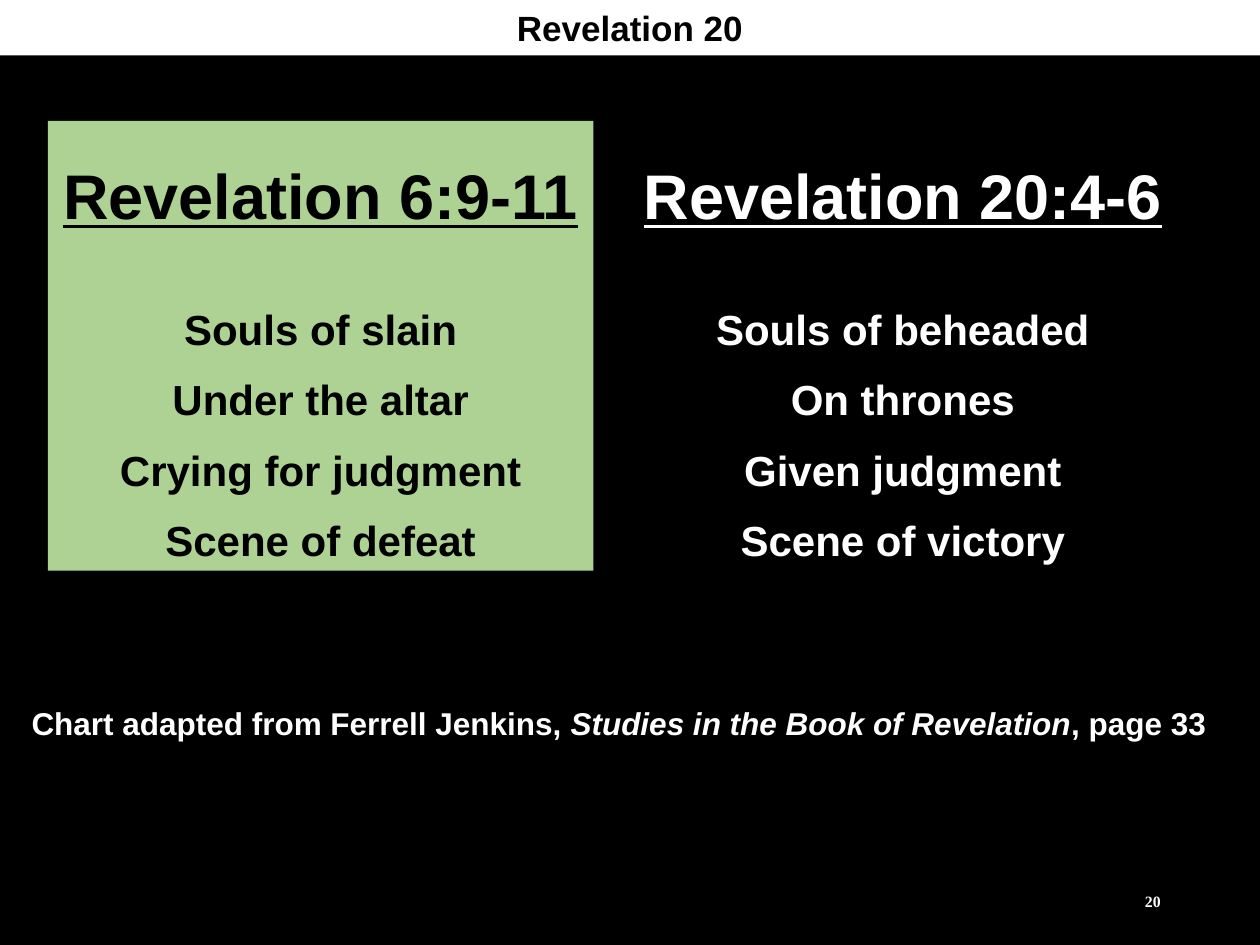
from pptx import Presentation
from pptx.dml.color import RGBColor
from pptx.enum import shapes, text
from pptx.util import Inches, Pt

COLORS = {"black": "000000", "white": "FFFFFF", "green": "AED194"}
ALIGN = text.PP_ALIGN
ANCHOR = text.MSO_ANCHOR
PANELS = [
    (0.38, 4.33, "green", "black", "Revelation 6:9-11",
     ["Souls of slain", "Under the altar", "Crying for judgment", "Scene of defeat"]),
    (4.99, 4.35, "black", "white", "Revelation 20:4-6",
     ["Souls of beheaded", "On thrones", "Given judgment", "Scene of victory"]),
]


def color(name):
    return RGBColor.from_string(COLORS[name])


def add_rect(slide, box, fill):
    rect = slide.shapes.add_shape(shapes.MSO_SHAPE.RECTANGLE, *map(Inches, box))
    rect.shadow.inherit = False
    rect.fill.solid()
    rect.fill.fore_color.rgb = color(fill)
    rect.line.fill.background()
    return rect.text_frame


def add_box(slide, box, anchor):
    frame = slide.shapes.add_textbox(*map(Inches, box)).text_frame
    frame.word_wrap = True
    frame.vertical_anchor = anchor
    return frame


def style(para, size, ink, align=ALIGN.CENTER, face="Arial"):
    para.alignment = align
    font = para.font
    font.name, font.size, font.bold = face, Pt(size), True
    font.color.rgb = color(ink)


def add_panel(slide, left, width, fill, ink, title, lines):
    frame = add_rect(slide, (left, 0.96, width, 3.57), fill)
    frame.word_wrap = False
    frame.vertical_anchor = ANCHOR.MIDDLE
    head = frame.paragraphs[0]
    head.text = title
    style(head, 36, ink)
    head.font.underline = True
    head.line_spacing = 1.4
    head.space_after = Pt(29)
    for line in lines:
        para = frame.add_paragraph()
        para.text = line
        style(para, 24, ink)
        para.line_spacing = 1.4


def main():
    deck = Presentation()
    deck.slide_width, deck.slide_height = Inches(10), Inches(7.5)
    slide = deck.slides.add_slide(deck.slide_layouts[6])
    slide.background.fill.solid()
    slide.background.fill.fore_color.rgb = color("black")

    # Two passages side by side
    for panel in PANELS:
        add_panel(slide, *panel)

    # Source note
    note = add_box(slide, (0.14, 5.54, 9.53, 0.4), ANCHOR.TOP).paragraphs[0]
    style(note, 18, "white", ALIGN.RIGHT)
    note.add_run().text = "Chart adapted from Ferrell Jenkins, "
    book = note.add_run()
    book.text = "Studies in the Book of Revelation"
    book.font.italic = True
    note.add_run().text = ", page 33"

    # Title bar
    title = add_rect(slide, (0, 0, 10, 0.44), "white").paragraphs[0]
    title.text = "Revelation 20"
    style(title, 20, "black")

    # Page number
    page = add_box(slide, (7.06, 6.95, 2.25, 0.4), ANCHOR.MIDDLE).paragraphs[0]
    page.text = "20"
    style(page, 9, "white", ALIGN.RIGHT, "Times New Roman")

    deck.save("out.pptx")


if __name__ == "__main__":
    main()
